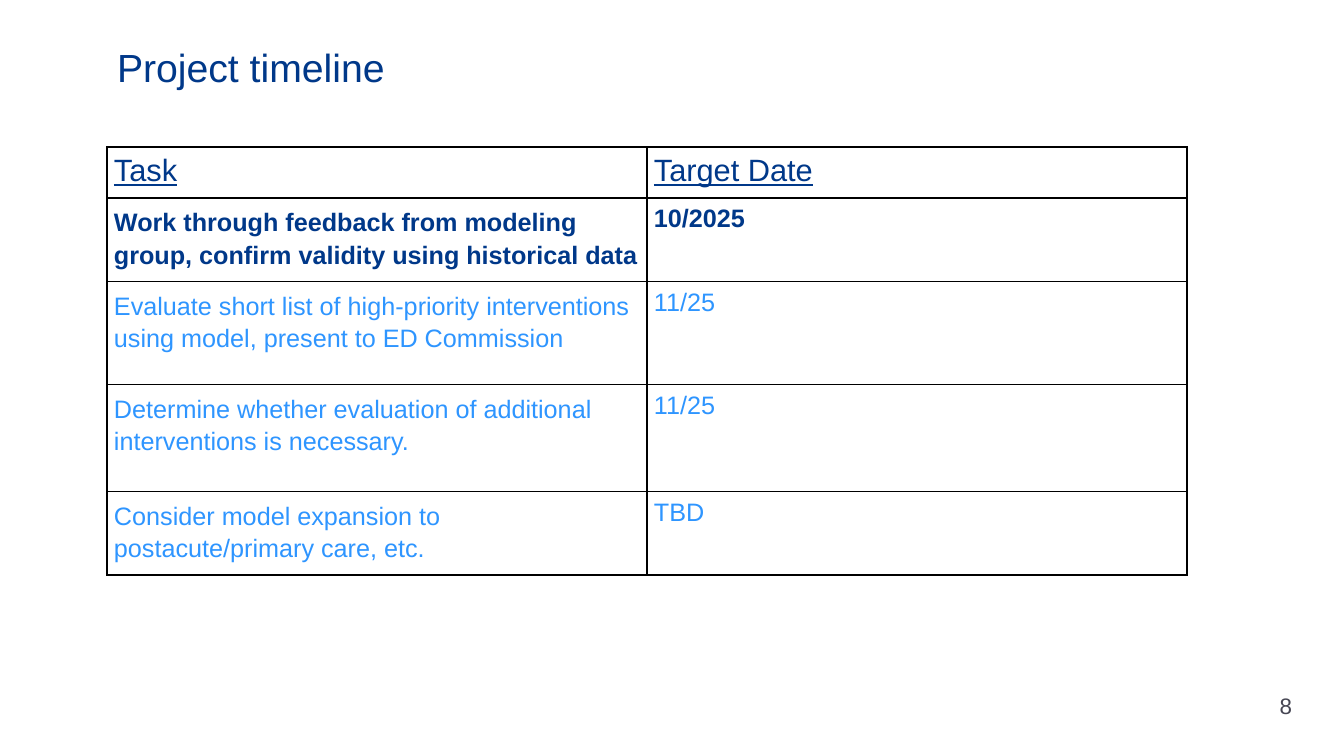
from lxml import etree
from pptx import Presentation
from pptx.dml.color import RGBColor
from pptx.enum.text import MSO_ANCHOR, PP_ALIGN
from pptx.oxml.ns import qn
from pptx.util import Pt

TOP, MIDDLE = MSO_ANCHOR.TOP, MSO_ANCHOR.MIDDLE
LEFT, RIGHT = PP_ALIGN.LEFT, PP_ALIGN.RIGHT
FONT = "Arial"
COLORS = {"navy": "003889", "sky": "2E95FF", "gray": "464653", "border": "000000"}
TASKS = [
    ("Work through feedback from modeling group, confirm validity using historical data", "10/2025"),
    ("Evaluate short list of high-priority interventions using model, present to ED Commission", "11/25"),
    ("Determine whether evaluation of additional interventions is necessary.", "11/25"),
    ("Consider model expansion to postacute/primary care, etc.", "TBD"),
]
ROW_HEIGHTS = [48, 79, 103, 107, 79]
COL_WIDTH = 540


def px(n):
    return round(n * 914400 / 100.8)


def add_run(p, text, size, color, bold=False, underline=False):
    r = p.add_run()
    r.text = text
    r.font.name = FONT
    r.font.size = Pt(size)
    r.font.bold = bold
    r.font.underline = underline
    r.font.color.rgb = RGBColor.from_string(COLORS[color])


def fill_frame(sp, box, text, size, color, align, anchor):
    sp.left, sp.top, sp.width, sp.height = map(px, box)
    tf = sp.text_frame
    tf.word_wrap = True
    tf.vertical_anchor = anchor
    p = tf.paragraphs[0]
    p.alignment = align
    add_run(p, text, size, color)


def set_borders(cell):
    tc_pr = cell._tc.get_or_add_tcPr()
    for i, side in enumerate(("lnL", "lnR", "lnT", "lnB")):
        ln = etree.Element(qn(f"a:{side}"), w=str(Pt(1)))
        fill = etree.SubElement(ln, qn("a:solidFill"))
        etree.SubElement(fill, qn("a:srgbClr"), val=COLORS["border"])
        tc_pr.insert(i, ln)


def fill_cell(cell, text, size, color, bold=False, underline=False, spacing=None):
    cell.fill.background()
    cell.margin_left = cell.margin_right = cell.margin_top = cell.margin_bottom = px(7)
    set_borders(cell)
    p = cell.text_frame.paragraphs[0]
    p.line_spacing = spacing
    add_run(p, text, size, color, bold, underline)


def add_timeline(s):
    frame = s.shapes.add_table(len(ROW_HEIGHTS), 2, px(107), px(147),
                               px(2 * COL_WIDTH), px(sum(ROW_HEIGHTS)))
    table = frame.table
    table.first_row = table.horz_banding = False
    for col in table.columns:
        col.width = px(COL_WIDTH)
    for row, height in zip(table.rows, ROW_HEIGHTS):
        row.height = px(height)
    for c, heading in enumerate(("Task", "Target Date")):
        fill_cell(table.cell(0, c), heading, 22, "navy", underline=True)
    for r, (task, date) in enumerate(TASKS, 1):
        current = r == 1
        color = "navy" if current else "sky"
        fill_cell(table.cell(r, 0), task, 18, color, current, spacing=1.15)
        fill_cell(table.cell(r, 1), date, 18, color, current)


def main():
    prs = Presentation()
    prs.slide_width, prs.slide_height = px(1344), px(756)
    s = prs.slides.add_slide(prs.slide_layouts[5])
    fill_frame(s.shapes.title, (107, 38, 1159, 97), "Project timeline", 28, "navy", LEFT, TOP)
    number = s.shapes.add_textbox(0, 0, 0, 0)
    fill_frame(number, (1238, 686, 64, 40), "8", 16, "gray", RIGHT, MIDDLE)
    add_timeline(s)
    prs.save("out.pptx")


if __name__ == "__main__":
    main()
